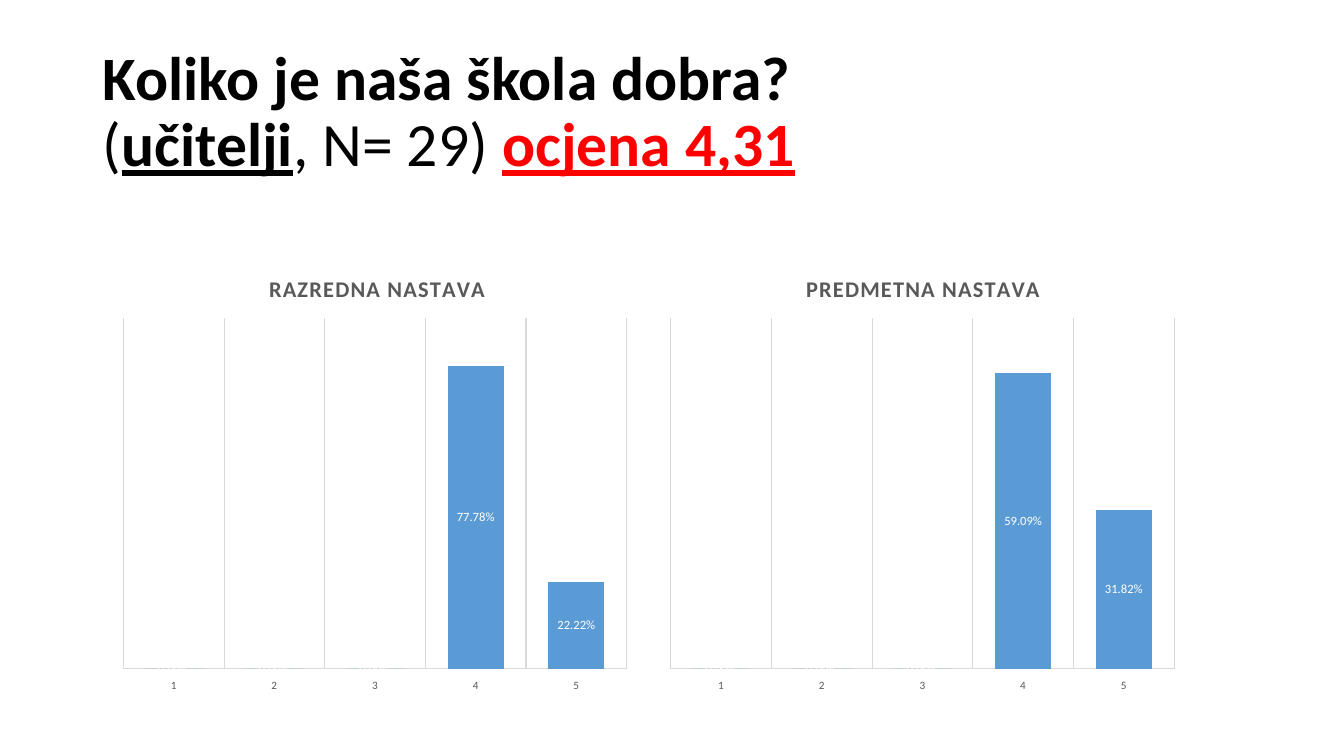
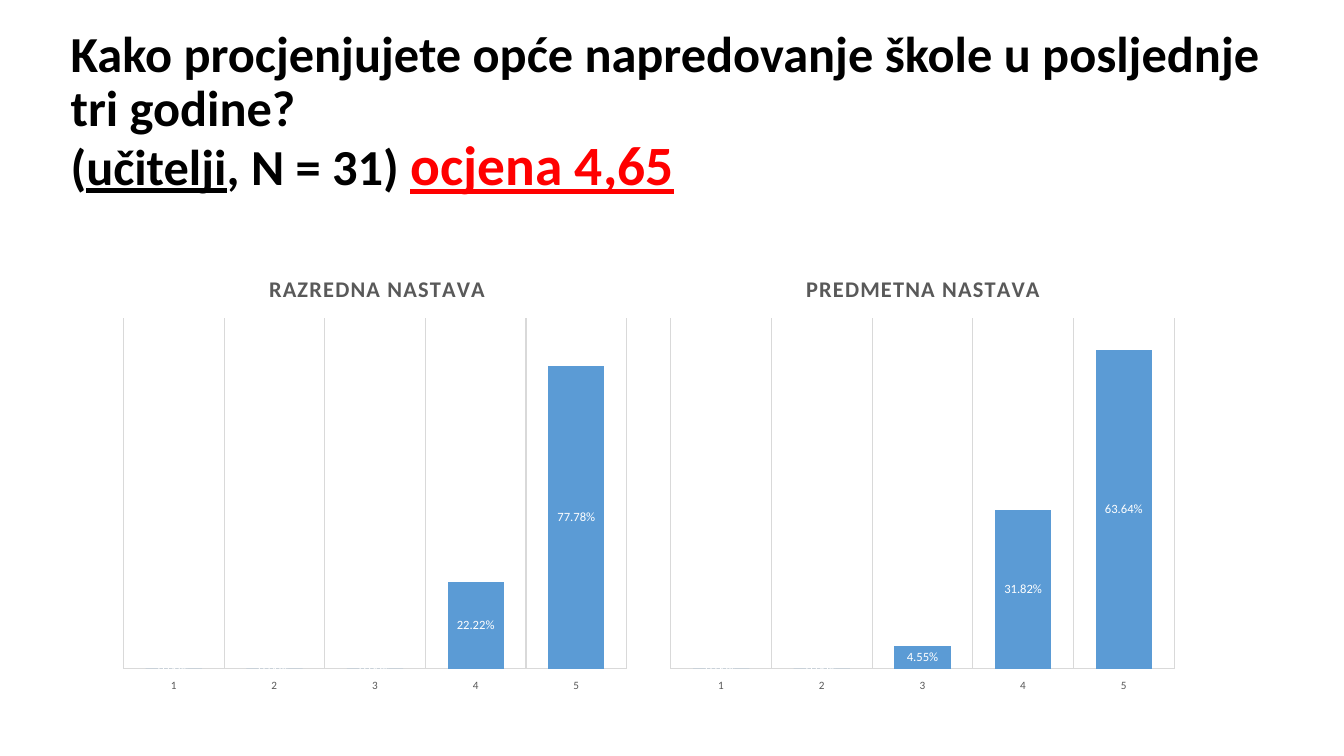
from dataclasses import dataclass
from lxml.etree import SubElement
from pptx import Presentation
from pptx.chart.data import CategoryChartData
from pptx.dml.color import RGBColor
from pptx.enum.chart import XL_CHART_TYPE, XL_LABEL_POSITION, XL_TICK_LABEL_POSITION, XL_TICK_MARK
from pptx.enum.text import MSO_ANCHOR, MSO_AUTO_SIZE, PP_ALIGN
from pptx.oxml import parse_xml
from pptx.oxml.ns import nsdecls, qn
from pptx.util import Inches, Pt


@dataclass(frozen=True)
class Theme:
    """Colours, font and type sizes shared by the slides."""

    font: str = "Calibri"
    ink: RGBColor = RGBColor(0x00, 0x00, 0x00)
    grade: RGBColor = RGBColor(0xFF, 0x00, 0x00)
    bar: RGBColor = RGBColor(0x5B, 0x9B, 0xD5)
    label: RGBColor = RGBColor(0xFF, 0xFF, 0xFF)
    muted: RGBColor = RGBColor(0x59, 0x59, 0x59)
    rule: RGBColor = RGBColor(0xD9, 0xD9, 0xD9)
    heading_size: float = 16
    chart_size: float = 10
    label_size: float = 9
    axis_size: float = 8
    rule_width: float = 0.75


@dataclass(frozen=True)
class Span:
    """A stretch of title text with one look."""

    text: str
    size: float
    bold: bool = True
    underline: bool = False
    color: RGBColor = Theme.ink


@dataclass(frozen=True)
class Group:
    """A group of teachers: heading, its left edge in the chart, and axis top."""

    heading: str
    heading_left: float
    axis_top: float


THEME = Theme()
GRADES = ("1", "2", "3", "4", "5")
PERCENT = "0.00%"
GROUPS = (
    Group("RAZREDNA NASTAVA", 0.29, 0.9),
    Group("PREDMETNA NASTAVA", 0.27, 0.7),
)
CHARTS_BOX = (1.12, 2.5, 10.63, 4.4)
CHARTS_GAP = 0.23
QUESTIONS = (
    {
        "title_box": (0.92, 0.4, 11.5, 1.45),
        "title_lines": (
            (Span("Koliko je naša škola dobra?", 44),),
            (
                Span("(", 44, bold=False),
                Span("učitelji", 44, underline=True),
                Span(", N= 29) ", 44, bold=False),
                Span("ocjena 4,31", 44, underline=True, color=THEME.grade),
            ),
        ),
        "shares": ((0, 0, 0, 0.7778, 0.2222), (0, 0, 0, 0.5909, 0.3182)),
    },
    {
        "title_box": (0.6, 0.4, 12.34, 1.45),
        "title_lines": (
            (Span("Kako procjenjujete opće napredovanje škole u posljednje tri godine?", 36),),
            (
                Span("(", 36),
                Span("učitelji", 36, underline=True),
                Span(", N = 31) ", 36),
                Span("ocjena 4,65", 39.6, underline=True, color=THEME.grade),
            ),
        ),
        "shares": ((0, 0, 0, 0.2222, 0.7778), (0, 0, 0.0455, 0.3182, 0.6364)),
    },
)


def style_font(font, size, color, bold=False):
    """Apply the theme font with a size, colour and weight."""
    font.name = THEME.font
    font.size = Pt(size)
    font.color.rgb = color
    font.bold = bold


def style_line(line):
    """Apply the thin grey rule used by axis and gridlines."""
    line.color.rgb = THEME.rule
    line.width = Pt(THEME.rule_width)


def place_in_chart(part, index, **fractions):
    """Fix a chart part at fractions of the chart's size."""
    for previous in part.findall(qn("c:layout")):
        part.remove(previous)
    layout = parse_xml(f"<c:layout {nsdecls('c')}><c:manualLayout/></c:layout>")
    manual = layout[0]
    if "w" in fractions:
        SubElement(manual, qn("c:layoutTarget")).set("val", "inner")
    for axis in ("x", "y"):
        SubElement(manual, qn(f"c:{axis}Mode")).set("val", "edge")
    for name, fraction in fractions.items():
        SubElement(manual, qn(f"c:{name}")).set("val", str(fraction))
    part.insert(index, layout)


def add_title(slide, box, lines):
    """Move the title placeholder to its box and write its lines."""
    title = slide.shapes.title
    title.left, title.top, title.width, title.height = map(Inches, box)
    frame = title.text_frame
    frame.word_wrap = True
    frame.auto_size = MSO_AUTO_SIZE.NONE
    frame.vertical_anchor = MSO_ANCHOR.MIDDLE
    paragraph = frame.paragraphs[0]
    paragraph.alignment = PP_ALIGN.LEFT
    paragraph.line_spacing = 0.9
    for number, spans in enumerate(lines):
        if number:
            paragraph.add_line_break()
            line_break = paragraph._p.findall(qn("a:br"))[-1]
            SubElement(line_break, qn("a:rPr")).set("sz", str(spans[0].size * 100))
        for span in spans:
            run = paragraph.add_run()
            run.text = span.text
            style_font(run.font, span.size, span.color, span.bold)
            run.font.underline = span.underline


def add_heading(chart, group):
    """Write the group's name above its columns."""
    chart.has_title = True
    heading = chart.chart_title
    run = heading.text_frame.paragraphs[0].add_run()
    run.text = group.heading
    style_font(run.font, THEME.heading_size, THEME.muted, bold=True)
    run._r.get_or_add_rPr().set("spc", "100")
    place_in_chart(heading._element, 1, x=group.heading_left, y=0.04)


def style_axes(chart, axis_top):
    """Show grades with vertical rules and hide the share axis."""
    grades = chart.category_axis
    grades.major_tick_mark = grades.minor_tick_mark = XL_TICK_MARK.NONE
    grades.tick_label_position = XL_TICK_LABEL_POSITION.LOW
    style_font(grades.tick_labels.font, THEME.axis_size, THEME.muted)
    grades.has_major_gridlines = True
    style_line(grades.format.line)
    style_line(grades.major_gridlines.format.line)
    shares = chart.value_axis
    shares.minimum_scale, shares.maximum_scale = 0, axis_top
    shares.has_major_gridlines = False
    shares.tick_labels.number_format = PERCENT
    shares.tick_labels.number_format_is_linked = False
    shares.visible = False


def style_columns(plot):
    """Colour the columns and label them with their shares."""
    plot.gap_width, plot.overlap = 79, 100
    plot.vary_by_categories = False
    fill = plot.series[0].format.fill
    fill.solid()
    fill.fore_color.rgb = THEME.bar
    plot.has_data_labels = True
    labels = plot.data_labels
    labels.show_value = True
    labels.position = XL_LABEL_POSITION.CENTER
    labels.number_format = PERCENT
    labels.number_format_is_linked = False
    style_font(labels.font, THEME.label_size, THEME.label)


def add_grade_chart(slide, box, group, shares):
    """Chart how one group of teachers spread its grades."""
    grade_data = CategoryChartData(number_format=PERCENT)
    grade_data.categories = GRADES
    grade_data.add_series("Series 1", shares)
    chart = slide.shapes.add_chart(
        XL_CHART_TYPE.COLUMN_STACKED, *map(Inches, box), grade_data
    ).chart
    chart.has_legend = False
    style_font(chart.font, THEME.chart_size, THEME.ink)
    add_heading(chart, group)
    style_axes(chart, group.axis_top)
    style_columns(chart.plots[0])
    plot_area = chart._chartSpace.find(".//" + qn("c:plotArea"))
    place_in_chart(plot_area, 0, x=0.02, y=0.15, w=0.96, h=0.79)


def add_chart_row(slide, box, shares_by_group):
    """Set the groups' charts side by side in equal widths."""
    left, top, width, height = box
    chart_width = (width - CHARTS_GAP * (len(GROUPS) - 1)) / len(GROUPS)
    for column, (group, shares) in enumerate(zip(GROUPS, shares_by_group)):
        chart_left = left + column * (chart_width + CHARTS_GAP)
        add_grade_chart(slide, (chart_left, top, chart_width, height), group, shares)


def add_question_slide(deck, question):
    """Add a question with its average grade and the two charts."""
    slide = deck.slides.add_slide(deck.slide_layouts.get_by_name("Title Only"))
    add_title(slide, question["title_box"], question["title_lines"])
    add_chart_row(slide, CHARTS_BOX, question["shares"])


def main():
    """Build and save the deck."""
    deck = Presentation()
    deck.slide_width, deck.slide_height = Inches(13.33), Inches(7.5)
    for question in QUESTIONS:
        add_question_slide(deck, question)
    deck.save("out.pptx")


if __name__ == "__main__":
    main()
